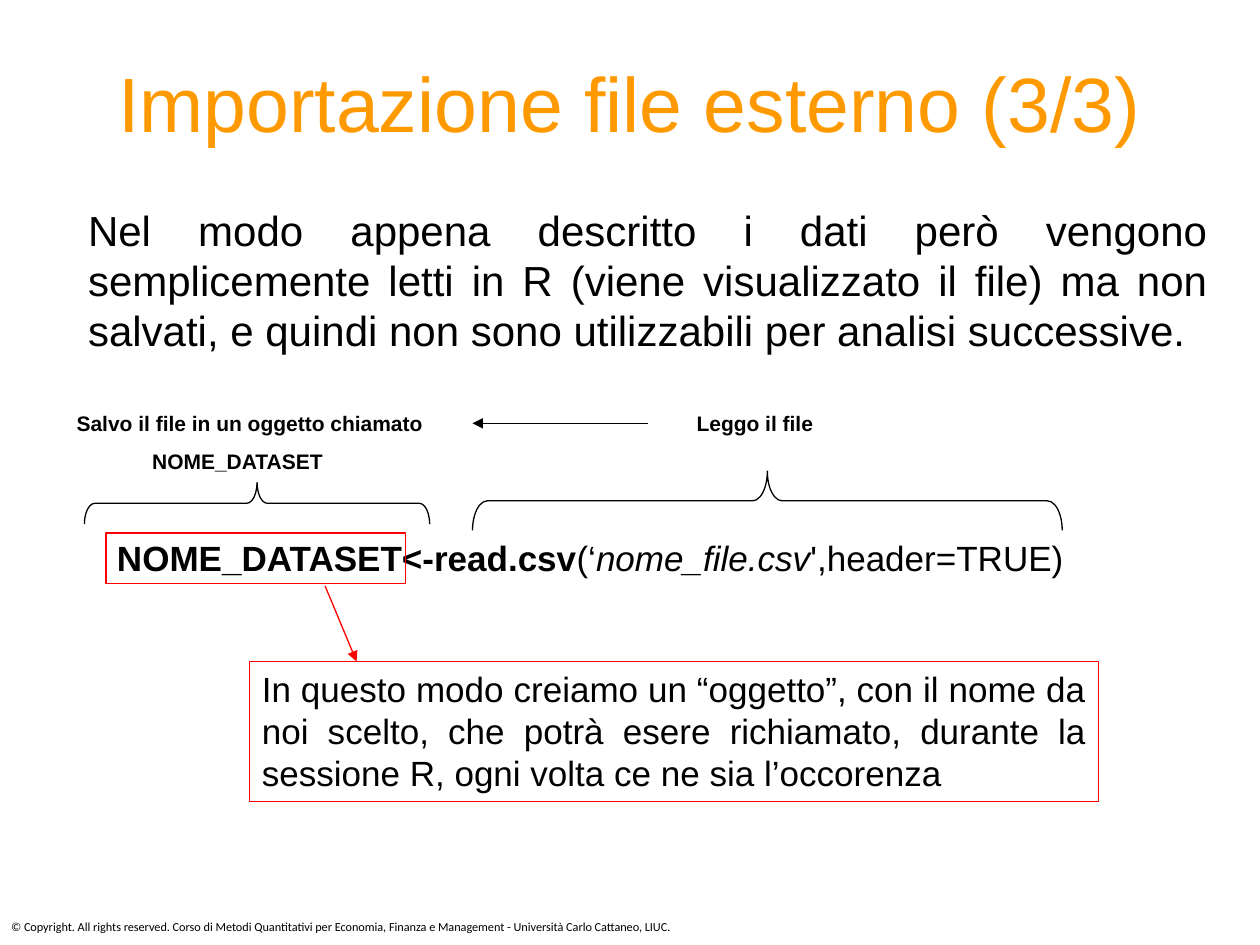
from dataclasses import dataclass

from lxml.etree import SubElement
from pptx import Presentation
from pptx.dml.color import RGBColor
from pptx.enum.shapes import MSO_CONNECTOR as Connector, MSO_SHAPE as Shape
from pptx.enum.text import MSO_ANCHOR as Anchor, PP_ALIGN as Align
from pptx.oxml.ns import qn
from pptx.util import Inches, Pt


@dataclass(frozen=True)
class Theme:
    font: str = "Arial"
    footer_font: str = "Calibri"
    ink: RGBColor = RGBColor(0x00, 0x00, 0x00)
    accent: RGBColor = RGBColor(0xFF, 0x99, 0x00)
    highlight: RGBColor = RGBColor(0xFF, 0x00, 0x00)
    title: int = 44
    body: int = 24
    code: int = 20
    label: int = 12
    footer: int = 7
    line: float = 0.75


THEME = Theme()


def inches(box):
    return [Inches(value) for value in box]


def write(shape, runs, size, color=THEME.ink, font=THEME.font,
          anchor=Anchor.TOP, hanging=0, **paragraph_format):
    """Fill the shape with one paragraph of (text, font settings) runs."""
    frame = shape.text_frame
    frame.word_wrap = True
    frame.vertical_anchor = anchor
    paragraph = frame.paragraphs[0]
    if hanging:
        properties = paragraph._p.get_or_add_pPr()
        properties.set("marL", str(Inches(hanging)))
        properties.set("indent", str(-Inches(hanging)))
    for name, value in paragraph_format.items():
        setattr(paragraph, name, value)
    for text, settings in runs:
        run = paragraph.add_run()
        run.text = text
        run.font.color.rgb = color
        for name, value in {"name": font, "size": Pt(size), **settings}.items():
            setattr(run.font, name, value)


def add_text(slide, box, runs, size, **settings):
    write(slide.shapes.add_textbox(*inches(box)), runs, size, **settings)


def add_outline(slide, preset, box, color):
    shape = slide.shapes.add_shape(preset, *inches(box))
    shape.shadow.inherit = False
    shape.fill.background()
    shape.line.color.rgb = color
    shape.line.width = Pt(THEME.line)
    return shape


def add_brace(slide, box):
    """Draw a brace that opens downwards and fills the box."""
    left, top, width, height = box
    upright = (left + (width - height) / 2, top + (height - width) / 2,
               height, width)
    brace = add_outline(slide, Shape.LEFT_BRACE, upright, THEME.ink)
    brace.rotation = 90
    brace.adjustments[0] = 0.25


def add_arrow(slide, start, end, color):
    arrow = slide.shapes.add_connector(
        Connector.STRAIGHT, *inches(start), *inches(end))
    arrow.line.color.rgb = color
    arrow.line.width = Pt(THEME.line)
    SubElement(arrow.line._get_or_add_ln(), qn("a:tailEnd"), type="triangle")
    SubElement(arrow._element.spPr, qn("a:effectLst"))


def add_title(slide, box):
    title = slide.shapes.title
    title.left, title.top, title.width, title.height = inches(box)
    write(title, [("Importazione file esterno (3/3)", {})], THEME.title,
          color=THEME.accent, anchor=Anchor.MIDDLE, alignment=Align.CENTER)


def add_introduction(slide, box):
    add_text(slide, box, [(
        "Nel modo appena descritto i dati però vengono semplicemente letti in "
        "R (viene visualizzato il file) ma non salvati, e quindi non sono "
        "utilizzabili per analisi successive.", {})],
        THEME.body, alignment=Align.JUSTIFY)


def add_command(slide, box):
    """Place the command with its labels and braces above it."""
    left, top, width, height = box
    steps = [
        ("Salvo il file in un oggetto chiamato NOME_DATASET",
         (left, top, 3.04, 0.67), (left + 0.16, top + 0.72, 2.74, 0.33)),
        ("Leggo il file",
         (left + 4.92, top, 2.38, 0.37), (left + 3.24, top + 0.63, 4.68, 0.47)),
    ]
    for label, label_box, brace_box in steps:
        add_text(slide, label_box, [(label, {"bold": True})], THEME.label,
                 hanging=0.6, line_spacing=1.5)
        add_brace(slide, brace_box)
    add_arrow(slide, (left + 4.63, top + 0.25), (left + 3.24, top + 0.25),
              THEME.ink)

    code_top = top + 1.1
    add_text(slide, (left + 0.32, code_top, width - 0.32, height - 1.1), [
        ("NOME_DATASET<-read.csv", {"bold": True}),
        ("(‘", {}),
        ("nome_file.csv", {"italic": True}),
        ("',header=TRUE)", {}),
    ], THEME.code)
    add_outline(slide, Shape.RECTANGLE,
                (left + 0.33, code_top + 0.02, 2.38, 0.4), THEME.highlight)


def add_explanation(slide, box):
    """Place the framed remark and the arrow that leads down to it."""
    left, top, _, _ = box
    add_arrow(slide, (left + 0.6, top - 0.6), (left + 0.85, top),
              THEME.highlight)
    remark = add_outline(slide, Shape.RECTANGLE, box, THEME.highlight)
    write(remark, [(
        "In questo modo creiamo un “oggetto”, con il nome da noi scelto, che "
        "potrà esere richiamato, durante la sessione R, ogni volta ce ne sia "
        "l’occorenza", {})], THEME.code, alignment=Align.JUSTIFY)


def add_footer(slide, box):
    add_text(slide, box, [(
        "© Copyright. All rights reserved. Corso di Metodi Quantitativi per "
        "Economia, Finanza e Management - Università Carlo Cattaneo, LIUC.",
        {})], THEME.footer, font=THEME.footer_font)


def main():
    presentation = Presentation()
    presentation.slide_width, presentation.slide_height = inches((10, 7.5))
    slide = presentation.slides.add_slide(presentation.slide_layouts[5])
    add_title(slide, (0.5, 0.18, 9, 1.25))
    add_introduction(slide, (0.6, 1.57, 9.08, 1.31))
    add_command(slide, (0.51, 3.11, 9.24, 1.79))
    add_explanation(slide, (1.98, 5.25, 6.74, 1.11))
    add_footer(slide, (-0.01, 7.25, 9.93, 0.22))
    presentation.save("out.pptx")


if __name__ == "__main__":
    main()
